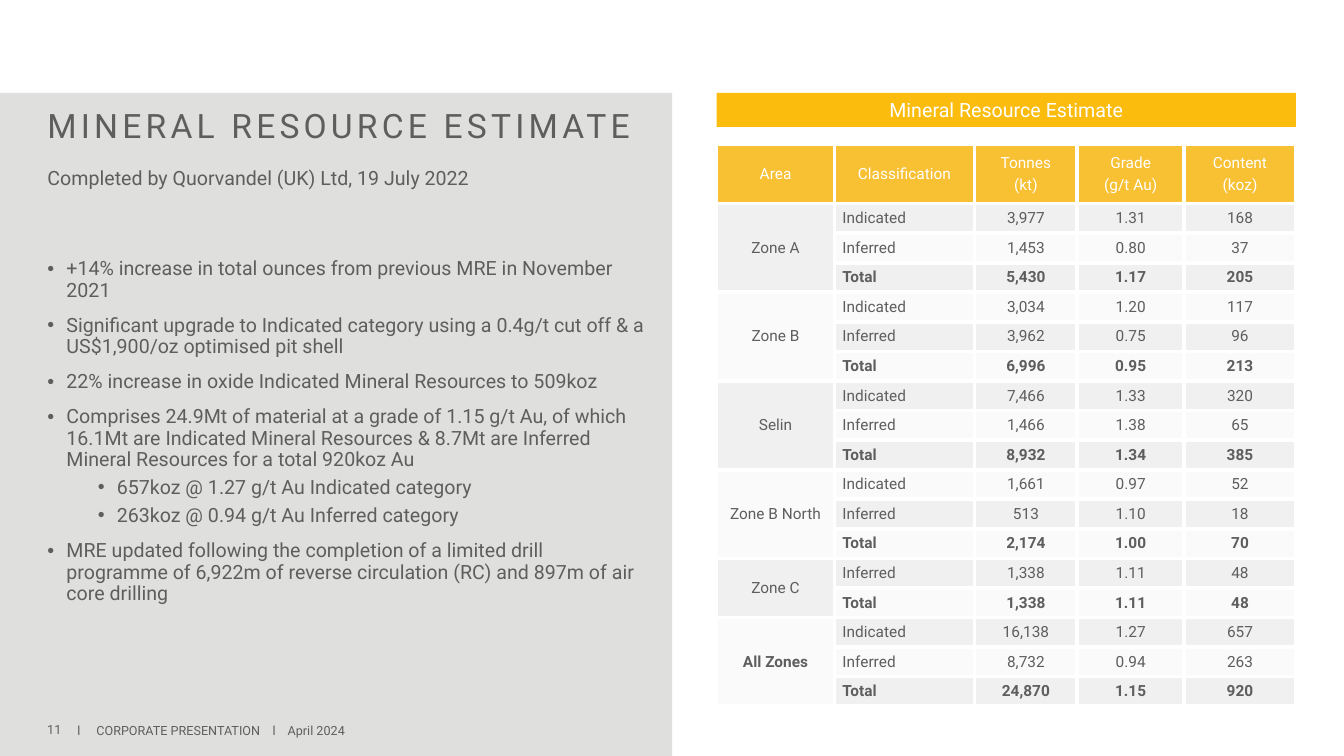
from lxml import etree
from pptx import Presentation
from pptx.dml.color import RGBColor
from pptx.enum.shapes import MSO_SHAPE
from pptx.enum.text import MSO_ANCHOR, MSO_AUTO_SIZE, PP_ALIGN
from pptx.oxml.ns import qn
from pptx.util import Cm, Pt

TITLE = "MINERAL RESOURCE ESTIMATE"
SUBTITLE = "Completed by Quorvandel (UK) Ltd, 19 July 2022"
BANNER = "Mineral Resource Estimate"
PAGE_NUMBER = "11"
FOOTER = "l\tCORPORATE PRESENTATION\tl\tApril 2024"
FOOTER_TABS = (0.48, 4.92, 5.3)
BULLETS = [
    (0, "+14% increase in total ounces from previous MRE in November 2021"),
    (0, "Significant upgrade to Indicated category using a 0.4g/t cut off & a US$1,900/oz optimised pit shell"),
    (0, "22% increase in oxide Indicated Mineral Resources to 509koz"),
    (0, "Comprises 24.9Mt of material at a grade of 1.15 g/t Au, of which 16.1Mt are Indicated "
        "Mineral Resources & 8.7Mt are Inferred Mineral Resources for a total 920koz Au"),
    (1, "657koz @ 1.27 g/t Au Indicated category"),
    (1, "263koz @ 0.94 g/t Au Inferred category"),
    (0, "MRE updated following the completion of a limited drill programme of 6,922m of "
        "reverse circulation (RC) and 897m of air core drilling"),
]
HEADINGS = ["Area", "Classification", "Tonnes\n(kt)", "Grade\n(g/t Au)", "Content\n(koz)"]
ZONES = [
    ("Zone A", [("Indicated", "3,977", "1.31", "168"),
                ("Inferred", "1,453", "0.80", "37"),
                ("Total", "5,430", "1.17", "205")]),
    ("Zone B", [("Indicated", "3,034", "1.20", "117"),
                ("Inferred", "3,962", "0.75", "96"),
                ("Total", "6,996", "0.95", "213")]),
    ("Selin", [("Indicated", "7,466", "1.33", "320"),
               ("Inferred", "1,466", "1.38", "65"),
               ("Total", "8,932", "1.34", "385")]),
    ("Zone B North", [("Indicated", "1,661", "0.97", "52"),
                      ("Inferred", "513", "1.10", "18"),
                      ("Total", "2,174", "1.00", "70")]),
    ("Zone C", [("Inferred", "1,338", "1.11", "48"),
                ("Total", "1,338", "1.11", "48")]),
    ("All Zones", [("Indicated", "16,138", "1.27", "657"),
                   ("Inferred", "8,732", "0.94", "263"),
                   ("Total", "24,870", "1.15", "920")]),
]
COLUMN_WIDTHS = (2.97, 3.53, 2.59, 2.69, 2.82)
TABLE_HEIGHT, HEADER_HEIGHT = 14.17, 1.5

GREY_TEXT = RGBColor(0x5E, 0x5E, 0x5E)
PANEL_GREY = RGBColor(0xDF, 0xDF, 0xDE)
BANNER_GOLD = RGBColor(0xFB, 0xBC, 0x0D)
HEADER_GOLD = RGBColor(0xF8, 0xC0, 0x33)
WHITE = RGBColor(0xFF, 0xFF, 0xFF)
BANDS = (RGBColor(0xF0, 0xF0, 0xF0), RGBColor(0xFA, 0xFA, 0xFA))
LEFT, CENTER = PP_ALIGN.LEFT, PP_ALIGN.CENTER
TOP, MIDDLE = MSO_ANCHOR.TOP, MSO_ANCHOR.MIDDLE
NO_FIT = MSO_AUTO_SIZE.NONE
RECTANGLE = MSO_SHAPE.RECTANGLE


def apply(target, **values):
    for name, value in values.items():
        setattr(target, name, value)


def style(para, size, color=GREY_TEXT, bold=False, **spacing):
    apply(para, **spacing)
    apply(para.font, name="Roboto", size=Pt(size), bold=bold)
    para.font.color.rgb = color


def place(box, left, top, width, height, anchor=MIDDLE):
    apply(box, left=Cm(left), top=Cm(top), width=Cm(width), height=Cm(height))
    apply(box.text_frame, word_wrap=True, auto_size=NO_FIT, vertical_anchor=anchor)


def add_block(page, color, *area):
    block = page.shapes.add_shape(RECTANGLE, *(Cm(length) for length in area))
    block.shadow.inherit = False
    block.fill.solid()
    block.fill.fore_color.rgb = color
    block.line.fill.background()
    return block


def add_label(page, text, *area):
    box = page.shapes.add_textbox(0, 0, 0, 0)
    place(box, *area)
    box.text_frame.text = text
    para = box.text_frame.paragraphs[0]
    return para


def set_bullet(para, margin, indent, symbol=None):
    properties = para._p.get_or_add_pPr()
    properties.set("marL", str(Cm(margin)))
    properties.set("indent", str(Cm(indent)))
    if symbol:
        etree.SubElement(properties, qn("a:buFont")).set("typeface", "Arial")
        etree.SubElement(properties, qn("a:buChar")).set("char", symbol)
    else:
        etree.SubElement(properties, qn("a:buNone"))


def set_borders(cell):
    properties = cell._tc.get_or_add_tcPr()
    for position, side in enumerate(("lnL", "lnR", "lnT", "lnB")):
        line = etree.Element(qn("a:" + side), w=str(Pt(3)))
        fill = etree.SubElement(line, qn("a:solidFill"))
        etree.SubElement(fill, qn("a:srgbClr")).set("val", str(WHITE))
        properties.insert(position, line)


def fill_cell(cell, text, fill, color=GREY_TEXT, bold=False, alignment=CENTER):
    cell.text = text
    apply(cell, vertical_anchor=MIDDLE, margin_left=Cm(0.2), margin_right=Cm(0.2),
          margin_top=0, margin_bottom=0)
    cell.fill.solid()
    cell.fill.fore_color.rgb = fill
    set_borders(cell)
    for index, para in enumerate(cell.text_frame.paragraphs):
        style(para, 11, color, bold, alignment=alignment,
              space_before=Pt(1.5 if index else 0), space_after=Pt(1.5))


def add_estimate_table(page):
    row_count = 1 + sum(len(rows) for _, rows in ZONES)
    frame = page.shapes.add_table(row_count, len(HEADINGS), Cm(18.06), Cm(3.63),
                                  Cm(sum(COLUMN_WIDTHS)), Cm(TABLE_HEIGHT))
    table = frame.table
    table.horz_banding = False
    for column, width in zip(table.columns, COLUMN_WIDTHS):
        column.width = Cm(width)
    for row in table.rows:
        row.height = Cm((TABLE_HEIGHT - HEADER_HEIGHT) / (row_count - 1))
    table.rows[0].height = Cm(HEADER_HEIGHT)
    for column, heading in enumerate(HEADINGS):
        fill_cell(table.cell(0, column), heading, HEADER_GOLD, WHITE)
    line = 1
    for zone_index, (zone, rows) in enumerate(ZONES):
        for offset in range(1, len(rows)):
            set_borders(table.cell(line + offset, 0))
        area = table.cell(line, 0)
        area.merge(table.cell(line + len(rows) - 1, 0))
        fill_cell(area, zone, BANDS[zone_index % 2], bold=zone == "All Zones")
        for values in rows:
            for column, value in enumerate(values, 1):
                fill_cell(table.cell(line, column), value, BANDS[(line - 1) % 2],
                          bold=values[0] == "Total", alignment=LEFT if column == 1 else CENTER)
            line += 1


def main():
    """Build the mineral resource estimate slide."""
    deck = Presentation()
    apply(deck, slide_width=Cm(33.87), slide_height=Cm(19.05))
    page = deck.slides.add_slide(deck.slide_layouts[3])
    title, body, subtitle = page.placeholders
    panel = add_block(page, PANEL_GREY, 0, 2.34, 16.94, 16.71)
    title.element.addprevious(panel.element)

    place(title, 0.94, 2.34, 32, 1.75)
    title.text_frame.text = TITLE
    heading = title.text_frame.paragraphs[0]
    style(heading, 24, alignment=LEFT, line_spacing=0.9)
    heading.runs[0].font._element.set("spc", "300")

    place(subtitle, 0.94, 3.89, 15.24, 1.27)
    subtitle.text_frame.text = SUBTITLE
    para = subtitle.text_frame.paragraphs[0]
    set_bullet(para, 0, 0)
    style(para, 14, line_spacing=0.9, space_before=Pt(0))

    place(body, 0.94, 6.4, 15.67, 11.3, TOP)
    body.text_frame.text = "\n".join(text for _, text in BULLETS)
    for index, (para, (level, _)) in enumerate(zip(body.text_frame.paragraphs, BULLETS)):
        set_bullet(para, 0.48 + 1.27 * level, -0.48, "•")
        gap = (10, 5)[level] if index else 0
        style(para, 14, level=level, line_spacing=0.9, space_before=Pt(gap))

    footer = add_label(page, FOOTER, 1.7, 17.91, 11.43, 1.02)
    tabs = etree.SubElement(footer._p.get_or_add_pPr(), qn("a:tabLst"))
    for position in FOOTER_TABS:
        etree.SubElement(tabs, qn("a:tab"), pos=str(Cm(position)), algn="l")
    style(footer, 9)
    style(add_label(page, PAGE_NUMBER, 0.94, 17.86, 1.88, 1.02), 9)

    banner = add_block(page, BANNER_GOLD, 18.06, 2.34, 14.6, 0.86)
    banner.text_frame.text = BANNER
    style(banner.text_frame.paragraphs[0], 14, WHITE, alignment=CENTER)
    add_estimate_table(page)
    deck.save("out.pptx")


if __name__ == "__main__":
    main()
